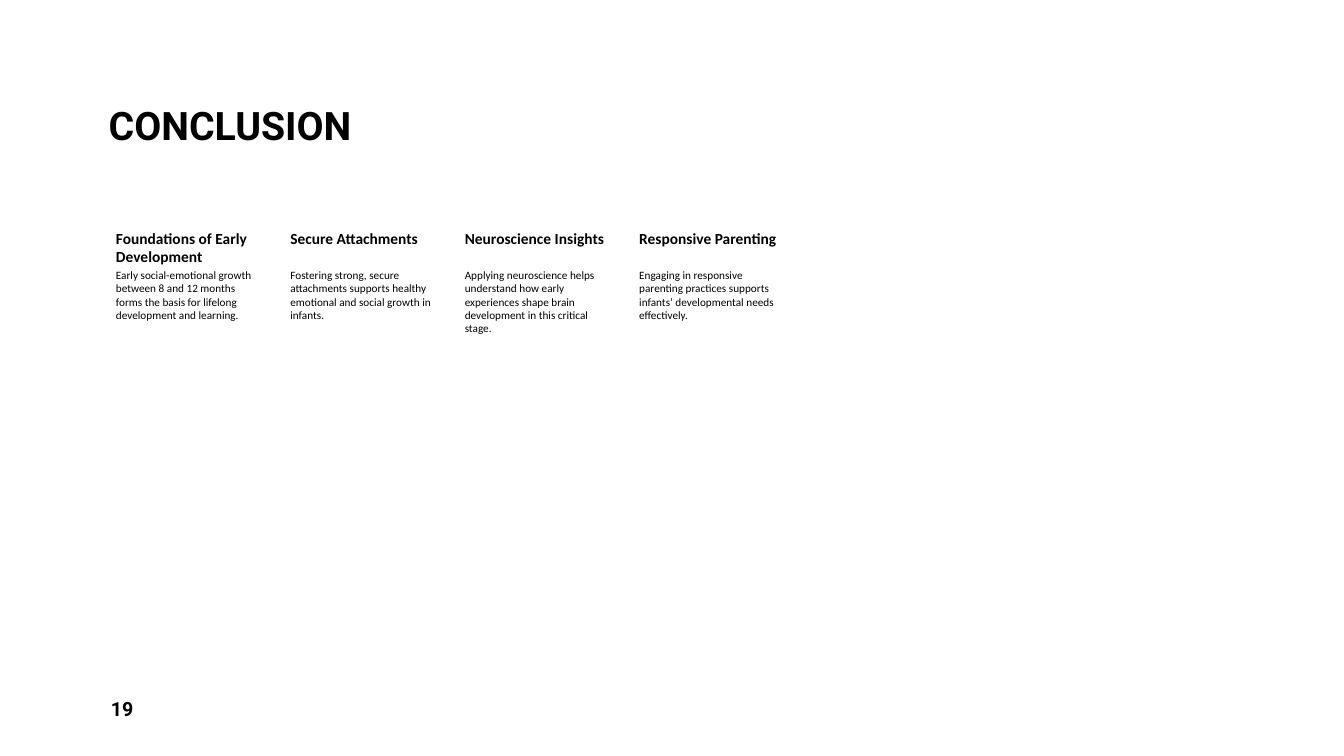
from pptx import Presentation
from pptx.dml.color import RGBColor
from pptx.enum.text import MSO_ANCHOR
from pptx.util import Inches, Pt

TOP = MSO_ANCHOR.TOP
MIDDLE = MSO_ANCHOR.MIDDLE
BOTTOM = MSO_ANCHOR.BOTTOM

BLACK = RGBColor(0x00, 0x00, 0x00)
WHITE = RGBColor(0xFF, 0xFF, 0xFF)
HEADING_FONT = "Roboto"
BODY_FONT = "Calibri"

COLUMN_LEFT = 1
COLUMN_STEP = 1.73
COLUMN_WIDTH = 1.57
HEADING_TOP = 2.25
HEADING_HEIGHT = 0.4
BODY_HEIGHT = 3.4

TAKEAWAYS = [
    ("Foundations of Early Development",
     "Early social-emotional growth between 8 and 12 months forms the basis "
     "for lifelong development and learning."),
    ("Secure Attachments",
     "Fostering strong, secure attachments supports healthy emotional and "
     "social growth in infants."),
    ("Neuroscience Insights",
     "Applying neuroscience helps understand how early experiences shape "
     "brain development in this critical stage."),
    ("Responsive Parenting",
     "Engaging in responsive parenting practices supports infants’ "
     "developmental needs effectively."),
]


def add_text(slide, text, left, top, width, height, *, size, font=BODY_FONT,
             bold=False, anchor=TOP, margins=(0.1, 0.05, 0.1, 0.05),
             line_spacing=1.0, space_after=0):
    shape = slide.shapes.add_textbox(
        Inches(left), Inches(top), Inches(width), Inches(height))
    frame = shape.text_frame
    frame.word_wrap = True
    frame.vertical_anchor = anchor
    (frame.margin_left, frame.margin_top,
     frame.margin_right, frame.margin_bottom) = map(Inches, margins)
    paragraph = frame.paragraphs[0]
    paragraph.line_spacing = line_spacing
    paragraph.space_after = Pt(space_after)
    run = paragraph.add_run()
    run.text = text
    run.font.name = font
    run.font.size = Pt(size)
    run.font.bold = bold
    run.font.color.rgb = BLACK


def add_takeaway(slide, index, heading, body):
    left = COLUMN_LEFT + index * COLUMN_STEP
    add_text(slide, heading, left, HEADING_TOP, COLUMN_WIDTH, HEADING_HEIGHT,
             size=11, bold=True, margins=(0.15, 0.02, 0.02, 0.02))
    add_text(slide, body, left, HEADING_TOP + HEADING_HEIGHT, COLUMN_WIDTH,
             BODY_HEIGHT, size=8, margins=(0.15, 0.01, 0.01, 0.01))


def main():
    presentation = Presentation()
    presentation.slide_width = Inches(13.33)
    presentation.slide_height = Inches(7.5)
    slide = presentation.slides.add_slide(presentation.slide_layouts[6])
    slide.background.fill.solid()
    slide.background.fill.fore_color.rgb = WHITE

    add_text(slide, "CONCLUSION", 0.98, 0.08, 11.38, 1.45, size=28,
             font=HEADING_FONT, bold=True, anchor=BOTTOM, line_spacing=0.9)
    for index, (heading, body) in enumerate(TAKEAWAYS):
        add_takeaway(slide, index, heading, body)
    add_text(slide, "19", 1, 6.83, 2.92, 0.4, size=14, font=HEADING_FONT,
             bold=True, anchor=MIDDLE, space_after=6)

    presentation.save("out.pptx")


if __name__ == "__main__":
    main()
